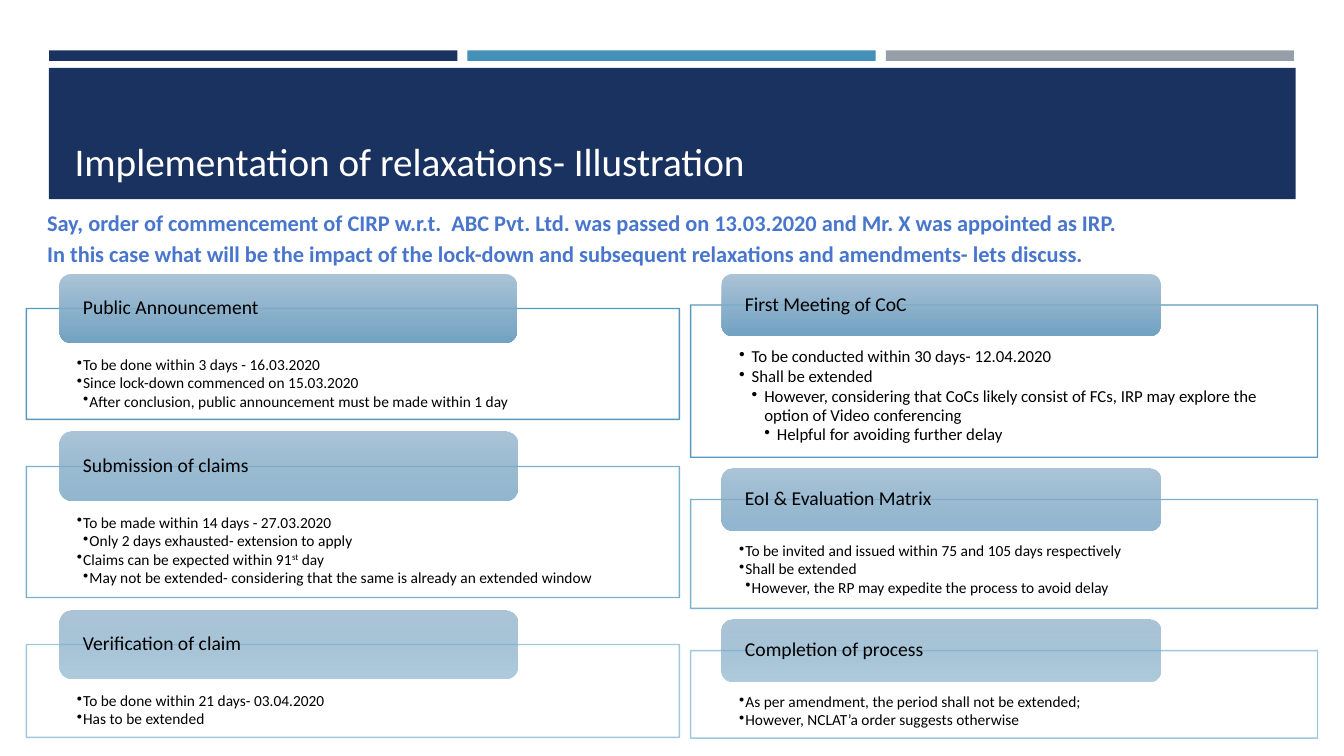
from dataclasses import dataclass

from lxml import etree
from pptx import Presentation
from pptx.dml.color import RGBColor
from pptx.enum.shapes import MSO_SHAPE
from pptx.enum.text import MSO_ANCHOR, PP_ALIGN
from pptx.oxml.ns import qn
from pptx.util import Pt

RECT, ROUNDED = MSO_SHAPE.RECTANGLE, MSO_SHAPE.ROUNDED_RECTANGLE
TOP, MIDDLE, BOTTOM = MSO_ANCHOR.TOP, MSO_ANCHOR.MIDDLE, MSO_ANCHOR.BOTTOM
LEFT, JUSTIFY = PP_ALIGN.LEFT, PP_ALIGN.JUSTIFY

# Content
TITLE = "Implementation of relaxations- Illustration"
SCENARIO = [
    "Say, order of commencement of CIRP w.r.t.  ABC Pvt. Ltd. was passed on "
    "13.03.2020 and Mr. X was appointed as IRP.",
    "In this case what will be the impact of the lock-down and subsequent "
    "relaxations and amendments- lets discuss.",
]
# Stage: heading, box height, text size, bullet indent, details.
# Detail: level, then runs; every second run is superscript.
LEFT_STAGES = [
    ("Public Announcement", 79.2, 11, 4.5, [
        (1, "To be done within 3 days - 16.03.2020"),
        (1, "Since lock-down commenced on 15.03.2020"),
        (2, "After conclusion, public announcement must be made within 1 day"),
    ]),
    ("Submission of claims", 93.6, 11, 4.5, [
        (1, "To be made within 14 days - 27.03.2020"),
        (2, "Only 2 days exhausted- extension to apply"),
        (1, "Claims can be expected within 91", "st", " day"),
        (2, "May not be extended- considering that the same is already an "
            "extended window"),
    ]),
    ("Verification of claim", 66.4, 11, 4.5, [
        (1, "To be done within 21 days- 03.04.2020"),
        (1, "Has to be extended"),
    ]),
]
RIGHT_STAGES = [
    ("First Meeting of CoC", 108.8, 12, 9, [
        (1, "To be conducted within 30 days- 12.04.2020"),
        (1, "Shall be extended"),
        (2, "However, considering that CoCs likely consist of FCs, IRP may "
            "explore the option of Video conferencing"),
        (3, "Helpful for avoiding further delay"),
    ]),
    ("EoI & Evaluation Matrix", 77.8, 11, 4.5, [
        (1, "To be invited and issued within 75 and 105 days respectively"),
        (1, "Shall be extended"),
        (2, "However, the RP may expedite the process to avoid delay"),
    ]),
    ("Completion of process", 62.6, 11, 4.5, [
        (1, "As per amendment, the period shall not be extended;"),
        (1, "However, NCLAT’a order suggests otherwise"),
    ]),
]
# Column geometry in points
COLUMNS = [
    dict(stages=LEFT_STAGES, left=18.9, width=466.4, tab_left=42.5,
         tab_width=326.8, tab_height=49.2, gap=9, inset=36, inset_top=34.6),
    dict(stages=RIGHT_STAGES, left=493.3, width=447.8, tab_left=515.6,
         tab_width=313.4, tab_height=44.2, gap=8, inset=34.6, inset_top=31),
]
STAGES_TOP = 195.8
OPACITIES = [90, 70, 50]


@dataclass(frozen=True)
class Theme:
    font: str = "Calibri"
    navy: str = "1A3260"
    blue: str = "4590B8"
    grey: str = "969FA7"
    white: str = "FFFFFF"
    black: str = "000000"
    scenario: str = "4876CD"
    tab_light: str = "A2BDD2"
    tab_dark: str = "6399BC"
    title_size: int = 28
    scenario_size: int = 16
    heading_size: int = 14


THEME = Theme()
rgb = RGBColor.from_string


def set_opacity(color_parent, *percents):
    for color, percent in zip(color_parent.iter(qn("a:srgbClr")), percents):
        etree.SubElement(color, qn("a:alpha")).set("val", str(percent * 1000))


def add_block(kind, left, top, width, height, color=None):
    block = slide.shapes.add_shape(kind, Pt(left), Pt(top), Pt(width), Pt(height))
    block.shadow.inherit = False
    block.line.fill.background()
    if color:
        block.fill.solid()
        block.fill.fore_color.rgb = rgb(color)
    return block


def set_frame(frame, anchor, insets=(7.2, 3.6, 7.2, 3.6)):
    frame.word_wrap = True
    frame.vertical_anchor = anchor
    (frame.margin_left, frame.margin_top,
     frame.margin_right, frame.margin_bottom) = map(Pt, insets)


def write(paragraph, runs, size, color, spacing, bold=False, align=LEFT):
    paragraph.alignment = align
    paragraph.line_spacing = spacing
    paragraph.space_before = paragraph.space_after = Pt(0)
    for index, text in enumerate(runs):
        run = paragraph.add_run()
        run.text = text
        run.font.name, run.font.size, run.font.bold = THEME.font, Pt(size), bold
        run.font.color.rgb = rgb(color)
        if index % 2:
            run._r.get_or_add_rPr().set("baseline", "30000")


def next_paragraph(frame, index):
    return frame.add_paragraph() if index else frame.paragraphs[0]


def set_bullet(paragraph, level, indent):
    properties = paragraph._p.get_or_add_pPr()
    properties.set("marL", str(Pt(indent * level)))
    properties.set("indent", str(-Pt(indent)))
    etree.SubElement(properties, qn("a:buChar")).set("char", "•")


def add_stage(column, top, stage, opacity):
    heading, height, size, indent, details = stage
    tab_height = column["tab_height"]
    box_top = top + tab_height / 2

    # Detail box
    box = add_block(RECT, column["left"], box_top, column["width"], height, THEME.white)
    box.line.color.rgb = rgb(THEME.blue)
    box.line.width = Pt(1)
    set_opacity(box._element.spPr, 90, opacity)
    inset = column["inset"]
    set_frame(box.text_frame, TOP, (inset, column["inset_top"], inset, 6.5))
    for index, (level, *runs) in enumerate(details):
        paragraph = next_paragraph(box.text_frame, index)
        write(paragraph, runs, size, THEME.black, 0.9)
        paragraph.space_after = Pt(1.3)
        set_bullet(paragraph, level, indent)

    # Heading tab, centred on the top edge of the box
    tab = add_block(ROUNDED, column["tab_left"], top, column["tab_width"], tab_height)
    tab.fill.gradient()
    tab.fill.gradient_angle = 270
    for stop, color in zip(tab.fill.gradient_stops, (THEME.tab_light, THEME.tab_dark)):
        stop.color.rgb = rgb(color)
    set_opacity(tab._element.spPr, 90, opacity)
    set_frame(tab.text_frame, MIDDLE, (14.4, 0, 14.4, 0))
    write(tab.text_frame.paragraphs[0], [heading], THEME.heading_size, THEME.black, 0.9)
    return box_top + height


presentation = Presentation()
presentation.slide_width, presentation.slide_height = Pt(960), Pt(540)
slide = presentation.slides.add_slide(presentation.slide_layouts[5])
title = slide.shapes.title

# Top strips and title band
for index, color in enumerate((THEME.navy, THEME.blue, THEME.grey)):
    add_block(RECT, 35.1 + index * 298.8, 36, 291.6, 7.5, color)
band = add_block(RECT, 34.9, 48.5, 890.5, 93.8, THEME.navy)

# Title, brought in front of its band
title.left, title.top, title.width, title.height = map(Pt, (46.1, 55.4, 868.3, 79.9))
band._element.addnext(title._element)
set_frame(title.text_frame, BOTTOM)
write(title.text_frame.paragraphs[0], [TITLE], THEME.title_size, THEME.white, 1.0)

# Scenario
scenario = slide.shapes.add_textbox(Pt(26.6), Pt(143.3), Pt(907.2), Pt(65.5))
set_frame(scenario.text_frame, TOP)
for index, sentence in enumerate(SCENARIO):
    write(next_paragraph(scenario.text_frame, index), [sentence],
          THEME.scenario_size, THEME.scenario, 1.14, bold=True, align=JUSTIFY)

# Stages of the process
for column in COLUMNS:
    top = STAGES_TOP
    for stage, opacity in zip(column["stages"], OPACITIES):
        top = add_stage(column, top, stage, opacity) + column["gap"]

presentation.save("out.pptx")
